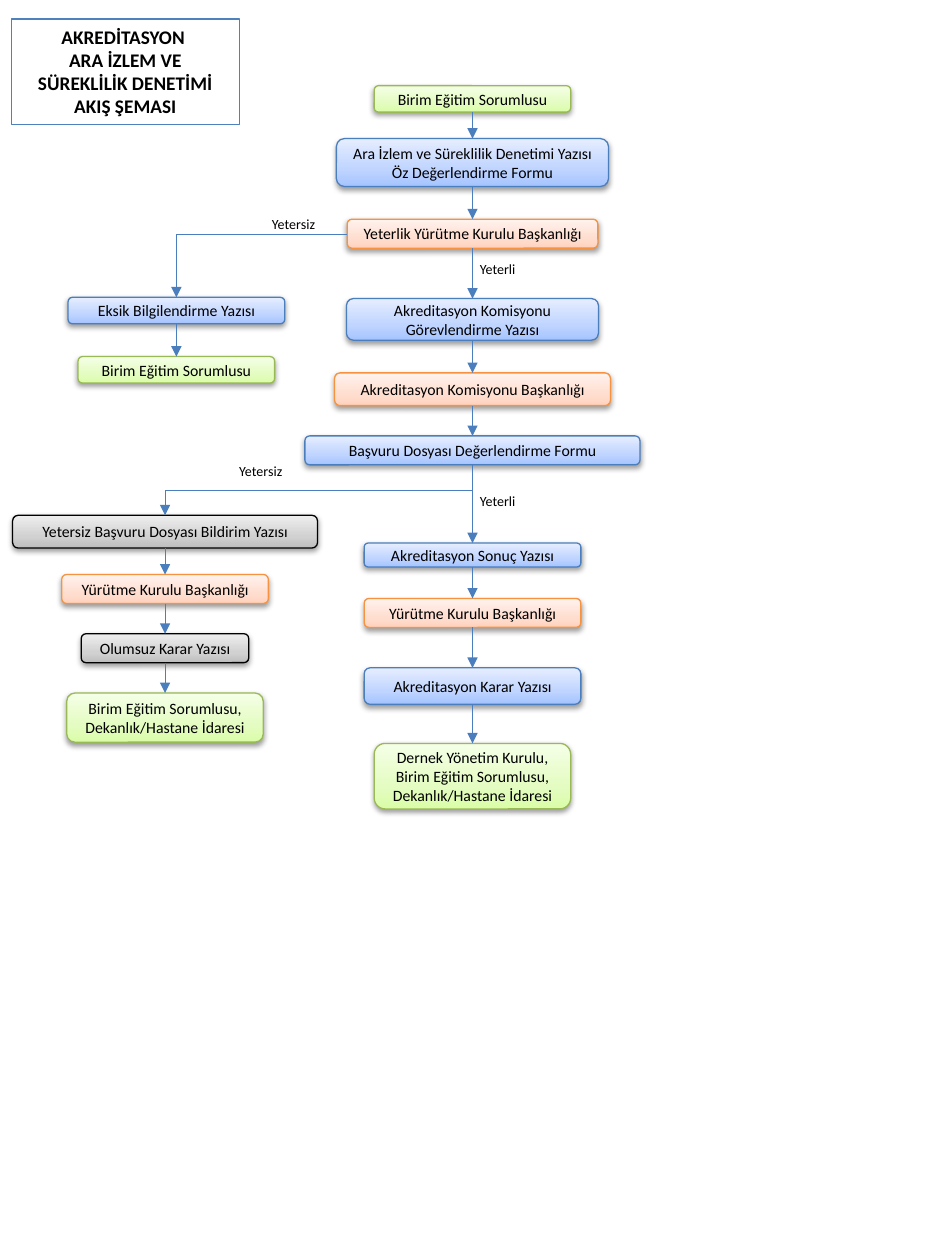
from dataclasses import dataclass

from pptx import Presentation
from pptx.dml.color import RGBColor
from pptx.enum.shapes import MSO_CONNECTOR as Conn, MSO_SHAPE as Geom
from pptx.enum.text import MSO_ANCHOR as Anchor, MSO_AUTO_SIZE as Fit, PP_ALIGN as Align
from pptx.oxml import parse_xml
from pptx.oxml.ns import nsdecls, qn
from pptx.shapes.autoshape import Shape
from pptx.shapes.connector import Connector
from pptx.slide import Slide
from pptx.text.text import TextFrame
from pptx.util import Inches, Pt

FONT = "Calibri"
BLACK = RGBColor(0x00, 0x00, 0x00)
WIRE = RGBColor(0x4B, 0x7E, 0xBC)
FRAME = RGBColor(0x4F, 0x81, 0xBD)
STOPS = (0, 35, 100)
TOP, LEFT, BOTTOM = 0, 1, 2
MAIN, LACK, FAIL = 3.75, 1.4, 1.31  # column centres


@dataclass(frozen=True)
class Style:
    line: RGBColor
    fade: tuple[RGBColor, RGBColor, RGBColor]


@dataclass(frozen=True)
class Node:
    mid: float
    top: float
    width: float
    height: float
    style: Style
    lines: tuple[str, ...]


@dataclass(frozen=True)
class Label:
    left: float
    top: float
    text: str


GREEN = Style(RGBColor(0x98, 0xB9, 0x55),
              (RGBColor(0xDA, 0xFD, 0xA7), RGBColor(0xE4, 0xFC, 0xC2), RGBColor(0xF5, 0xFF, 0xE7)))
BLUE = Style(WIRE,
             (RGBColor(0xA4, 0xC4, 0xFF), RGBColor(0xBF, 0xD4, 0xFF), RGBColor(0xE6, 0xEE, 0xFF)))
ORANGE = Style(RGBColor(0xF6, 0x92, 0x40),
               (RGBColor(0xFF, 0xD2, 0xBD), RGBColor(0xFF, 0xDE, 0xD0), RGBColor(0xFF, 0xF2, 0xED)))
GREY = Style(BLACK,
             (RGBColor(0xBD, 0xBD, 0xBD), RGBColor(0xD1, 0xD1, 0xD1), RGBColor(0xEE, 0xEE, 0xEE)))

TITLE = ("AKREDİTASYON ", "ARA İZLEM VE SÜREKLİLİK DENETİMİ", "AKIŞ ŞEMASI")
MAIN_FLOW = (
    Node(MAIN, 0.68, 1.56, 0.21, GREEN, ("Birim Eğitim Sorumlusu",)),
    Node(MAIN, 1.1, 2.16, 0.38, BLUE,
         ("Ara İzlem ve Süreklilik Denetimi Yazısı", "Öz Değerlendirme Formu")),
    Node(MAIN, 1.74, 1.99, 0.23, ORANGE, ("Yeterlik Yürütme Kurulu Başkanlığı",)),
    Node(MAIN, 2.37, 2, 0.33, BLUE, ("Akreditasyon Komisyonu Görevlendirme Yazısı",)),
    Node(MAIN, 2.96, 2.19, 0.26, ORANGE, ("Akreditasyon Komisyonu Başkanlığı",)),
    Node(MAIN, 3.46, 2.66, 0.23, BLUE, ("Başvuru Dosyası Değerlendirme Formu",)),
    Node(MAIN, 4.31, 1.72, 0.19, BLUE, ("Akreditasyon Sonuç Yazısı",)),
    Node(MAIN, 4.75, 1.72, 0.23, ORANGE, ("Yürütme Kurulu Başkanlığı",)),
    Node(MAIN, 5.3, 1.72, 0.29, BLUE, ("Akreditasyon Karar Yazısı",)),
    Node(MAIN, 5.9, 1.56, 0.52, GREEN,
         ("Dernek Yönetim Kurulu, Birim Eğitim Sorumlusu,", "Dekanlık/Hastane İdaresi")),
)
LACK_FLOW = (
    Node(LACK, 2.36, 1.72, 0.21, BLUE, ("Eksik Bilgilendirme Yazısı",)),
    Node(LACK, 2.83, 1.56, 0.21, GREEN, ("Birim Eğitim Sorumlusu",)),
)
FAIL_FLOW = (
    Node(FAIL, 4.09, 2.42, 0.26, GREY, ("Yetersiz Başvuru Dosyası Bildirim Yazısı",)),
    Node(FAIL, 4.56, 1.64, 0.23, ORANGE, ("Yürütme Kurulu Başkanlığı",)),
    Node(FAIL, 5.03, 1.33, 0.23, GREY, ("Olumsuz Karar Yazısı",)),
    Node(FAIL, 5.5, 1.56, 0.39, GREEN,
         ("Birim Eğitim Sorumlusu,", "Dekanlık/Hastane İdaresi")),
)
LABELS = (
    Label(2.06, 1.66, "Yetersiz"),
    Label(3.71, 2.02, "Yeterli"),
    Label(1.8, 3.62, "Yetersiz"),
    Label(3.71, 3.86, "Yeterli"),
)


def write(frame: TextFrame, lines: tuple[str, ...], size: float,
          align: Align = Align.CENTER, bold: bool = False) -> None:
    frame.word_wrap = True
    for i, line in enumerate(lines):
        para = frame.paragraphs[0] if i == 0 else frame.add_paragraph()
        para.alignment = align
        run = para.add_run()
        run.text = line
        font = run.font
        font.name, font.size, font.bold = FONT, Pt(size), bold
        font.color.rgb = BLACK


def add_fade(shape: Shape, style: Style) -> None:
    """Fill from the bottom up, with a soft shadow below."""
    stops = "".join(f'<a:gs pos="{pos * 1000}"><a:srgbClr val="{tint}"/></a:gs>'
                    for pos, tint in zip(STOPS, style.fade))
    props = shape._element.spPr
    props.find(qn("a:prstGeom")).addnext(parse_xml(
        f'<a:gradFill {nsdecls("a")} rotWithShape="1"><a:gsLst>{stops}</a:gsLst>'
        '<a:lin ang="16200000" scaled="0"/></a:gradFill>'))
    shape.shadow.inherit = False
    props.find(qn("a:effectLst")).append(parse_xml(
        f'<a:outerShdw {nsdecls("a")} blurRad="40000" dist="20000" dir="5400000" '
        'rotWithShape="0"><a:srgbClr val="000000"><a:alpha val="38000"/>'
        '</a:srgbClr></a:outerShdw>'))


def add_node(slide: Slide, node: Node) -> Shape:
    shape = slide.shapes.add_shape(
        Geom.ROUNDED_RECTANGLE, Inches(node.mid - node.width / 2), Inches(node.top),
        Inches(node.width), Inches(node.height))
    add_fade(shape, node.style)
    shape.line.color.rgb = node.style.line
    shape.line.width = Pt(0.75)
    shape.text_frame.vertical_anchor = Anchor.MIDDLE
    write(shape.text_frame, node.lines, 9)
    return shape


def add_arrow(slide: Slide, kind: Conn, start: Shape, side: int, end: Shape) -> Connector:
    """Join a side of start to the top of end."""
    wire = slide.shapes.add_connector(kind, 0, 0, 0, 0)
    wire.begin_connect(start, side)
    wire.end_connect(end, TOP)
    wire.line.color.rgb = WIRE
    wire.line.width = Pt(0.25)
    wire.line._get_or_add_ln().append(
        parse_xml(f'<a:tailEnd {nsdecls("a")} type="triangle"/>'))
    wire._element.spPr.append(parse_xml(f'<a:effectLst {nsdecls("a")}/>'))
    return wire


def add_flow(slide: Slide, nodes: tuple[Node, ...]) -> list[Shape]:
    """Draw a column of nodes, each with an arrow to the next."""
    shapes = [add_node(slide, node) for node in nodes]
    for start, end in zip(shapes, shapes[1:]):
        add_arrow(slide, Conn.STRAIGHT, start, BOTTOM, end)
    return shapes


def turn(wire: Connector, angle: int, flip: bool) -> None:
    xfrm = wire._element.spPr.find(qn("a:xfrm"))
    for name in ("flipH", "flipV"):
        xfrm.attrib.pop(name, None)
    xfrm.set("rot", str(angle * 60000))
    if flip:
        xfrm.set("flipV", "1")


def add_corner(slide: Slide, start: Shape, end: Shape) -> None:
    """Go left from start, then down to end."""
    wire = add_arrow(slide, Conn.ELBOW, start, LEFT, end)
    wire._element.spPr.find(qn("a:prstGeom")).set("prst", "bentConnector2")
    turn(wire, 180, True)


def add_step(slide: Slide, start: Shape, end: Shape) -> None:
    """Go down from start, left, then down to end."""
    wire = add_arrow(slide, Conn.ELBOW, start, BOTTOM, end)
    wide, high = wire.width, wire.height
    shift = (wide - high) // 2
    wire.left, wire.top = wire.left + shift, wire.top - shift
    wire.width, wire.height = high, wide
    turn(wire, 90, False)


def add_title(slide: Slide) -> None:
    title = slide.shapes.title
    title.left, title.top = Inches(0.09), Inches(0.15)
    title.width, title.height = Inches(1.81), Inches(0.84)
    title.line.color.rgb = FRAME
    title.line.width = Pt(0.75)
    title.text_frame.auto_size = Fit.NONE
    title.text_frame.vertical_anchor = Anchor.TOP
    write(title.text_frame, TITLE, 11, bold=True)


def add_label(slide: Slide, label: Label) -> None:
    box = slide.shapes.add_textbox(
        Inches(label.left), Inches(label.top), Inches(1.17), Inches(0.24))
    box.text_frame.auto_size = Fit.SHAPE_TO_FIT_TEXT
    write(box.text_frame, (label.text,), 8, Align.LEFT)


def main() -> None:
    deck = Presentation()
    deck.slide_width, deck.slide_height = Inches(7.5), Inches(10)
    slide = deck.slides.add_slide(deck.slide_layouts.get_by_name("Title Only"))
    add_title(slide)
    trunk, lack, fail = (add_flow(slide, flow) for flow in (MAIN_FLOW, LACK_FLOW, FAIL_FLOW))
    add_corner(slide, trunk[2], lack[0])
    add_step(slide, trunk[5], fail[0])
    for label in LABELS:
        add_label(slide, label)
    deck.save("out.pptx")


if __name__ == "__main__":
    main()
